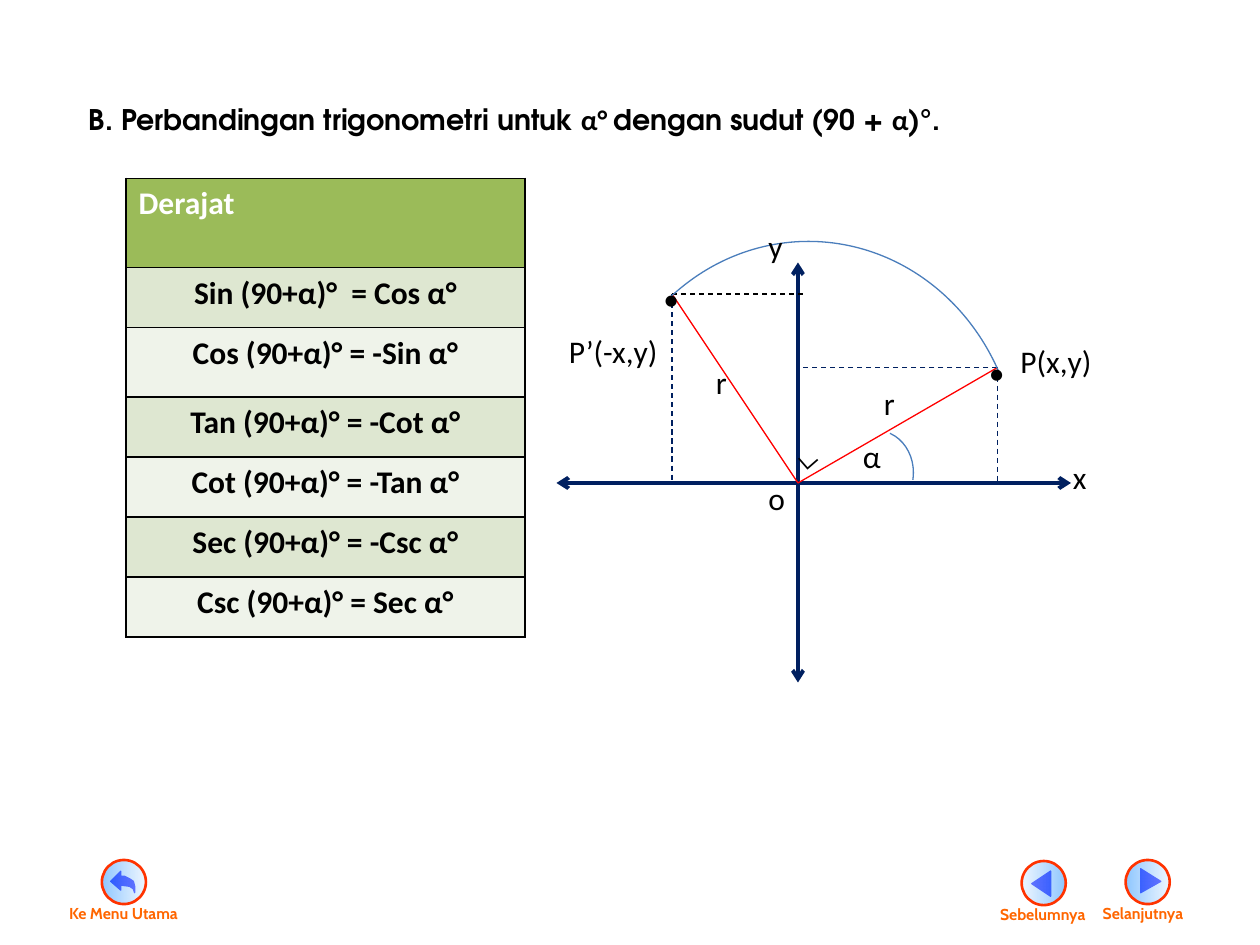
import dataclasses

import lxml.etree
import pptx
import pptx.dml.color
import pptx.enum.dml
import pptx.enum.shapes
import pptx.enum.text
import pptx.oxml
import pptx.oxml.ns
import pptx.util

CELL = pptx.util.Inches(10) / 120  # the slide is a grid of 120 columns by 90 rows


@dataclasses.dataclass(frozen=True)
class Theme:
    text: str = "000000"
    header_text: str = "FFFFFF"
    header_fill: str = "9BBB59"
    band_fills: tuple = ("DEE7D1", "EFF3EA")
    axis: str = "002060"
    radius: str = "FF0000"
    arc: str = "4B7EBC"
    glyph: str = "0000FF"
    ring: str = "FF3300"
    button_text: str = "FF6600"
    light_stop: tuple = ("DFEFFF", 51)
    dark_stop: tuple = ("3399FF", 56)
    body_font: str = "Calibri"
    title_font: str = "TeX Gyre Adventor"
    button_font: str = "Cabin"
    title_size: float = 16.2
    body_size: float = 18
    button_size: float = 9


THEME = Theme()


@dataclasses.dataclass(frozen=True)
class Box:
    """A rectangle in grid columns and rows."""
    left: float
    top: float
    width: float
    height: float

    def inner(self, left, top, width, height):
        return Box(self.left + left, self.top + top, width, height)

    def lengths(self):
        return [pptx.util.Emu(round(value * CELL))
                for value in (self.left, self.top, self.width, self.height)]


def rgb(color):
    return pptx.dml.color.RGBColor.from_string(color)


def add_child(parent, tag, **attributes):
    child = lxml.etree.SubElement(parent, pptx.oxml.ns.qn(tag))
    for name, value in attributes.items():
        child.set(name, str(value))
    return child


def add_run(paragraph, text, color=THEME.text, font=THEME.body_font,
            size=THEME.body_size, bold=False):
    run = paragraph.add_run()
    run.text = text
    run.font.name, run.font.size, run.font.bold = font, pptx.util.Pt(size), bold
    run.font.color.rgb = rgb(color)


def add_label(shapes, box, text, **style):
    label = shapes.add_textbox(*box.lengths())
    label.text_frame.word_wrap = False
    add_run(label.text_frame.paragraphs[0], text, **style)
    return label


def style_outline(shape, color, width):
    shape.shadow.inherit = False
    shape.line.color.rgb = rgb(color)
    shape.line.width = pptx.util.Pt(width)


def add_title(slide, box):
    title = slide.shapes.add_textbox(*box.lengths())
    frame = title.text_frame
    frame.word_wrap = True
    frame.margin_top = pptx.util.Inches(0.14)
    paragraph = frame.paragraphs[0]
    paragraph.alignment = pptx.enum.text.PP_ALIGN.CENTER
    for text, font in (
            ("B. Perbandingan trigonometri untuk ", THEME.title_font),
            ("α° ", THEME.body_font),
            ("dengan sudut (90 + ", THEME.title_font),
            ("α", THEME.body_font),
            (")°.", THEME.title_font)):
        add_run(paragraph, text, font=font, size=THEME.title_size, bold=True)


def add_borders(cell):
    properties = cell._tc.get_or_add_tcPr()
    for index, side in enumerate(("a:lnL", "a:lnR", "a:lnT", "a:lnB")):
        border = add_child(properties, side, w=pptx.util.Pt(1))
        add_child(add_child(border, "a:solidFill"), "a:srgbClr", val=THEME.text)
        properties.insert(index, border)


def add_identity_table(slide, box):
    rows = (
        ("Derajat", 8.5), ("Sin (90+α)°  = Cos α°", 5.72),
        ("Cos (90+α)° = -Sin α°", 6.6), ("Tan (90+α)° = -Cot α°", 5.72),
        ("Cot (90+α)° = -Tan α°", 5.72), ("Sec (90+α)° = -Csc α°", 5.72),
        ("Csc (90+α)° = Sec α°", 5.72))
    table = slide.shapes.add_table(len(rows), 1, *box.lengths()).table
    for index, (text, height) in enumerate(rows):
        table.rows[index].height = round(height * CELL)
        cell = table.cell(index, 0)
        header = index == 0
        fill = THEME.header_fill if header else THEME.band_fills[(index - 1) % 2]
        cell.fill.solid()
        cell.fill.fore_color.rgb = rgb(fill)
        paragraph = cell.text_frame.paragraphs[0]
        alignments = pptx.enum.text.PP_ALIGN
        paragraph.alignment = alignments.LEFT if header else alignments.CENTER
        add_run(paragraph, text, THEME.header_text if header else THEME.text, bold=True)
        add_borders(cell)


def add_diagram(slide, box):
    """Draw the axes, both radii, their projections, the arcs and the labels."""
    origin, image_point, point = (23, 25), (11, 7), (42, 14)

    def add_line(start, end, color, width=0.75, dashed=False, arrows=False):
        ends = [pptx.util.Emu(round(value * CELL)) for x, y in (start, end)
                for value in (box.left + x, box.top + y)]
        line = slide.shapes.add_connector(pptx.enum.shapes.MSO_CONNECTOR.STRAIGHT, *ends)
        line.line.color.rgb = rgb(color)
        line.line.width = pptx.util.Pt(width)
        if dashed:
            line.line.dash_style = pptx.enum.dml.MSO_LINE.DASH
        if arrows:
            for tag in ("a:headEnd", "a:tailEnd"):
                add_child(line.line._get_or_add_ln(), tag, type="arrow")
        add_child(line._element.spPr, "a:effectLst")

    def add_arc(place, start_angle, end_angle):
        arc = slide.shapes.add_shape(pptx.enum.shapes.MSO_SHAPE.ARC,
                                     *box.inner(*place).lengths())
        arc.adjustments[0] = start_angle * 0.6
        arc.adjustments[1] = end_angle * 0.6
        arc.fill.background()
        style_outline(arc, THEME.arc, 0.75)

    for start, end in (((23, 4), (23, 44)), ((0, 25), (49, 25))):
        add_line(start, end, THEME.axis, width=2.25, arrows=True)
    for tip in (image_point, point):
        add_line(tip, origin, THEME.radius)
        add_line(tip, (tip[0], origin[1]), THEME.axis, dashed=True)
    add_line(point, (origin[0], point[1]), THEME.axis, dashed=True)
    add_line(image_point, (23.5, image_point[1]), THEME.text, dashed=True)
    add_arc((4, 2, 40, 43), 230.5, 333.97)
    add_arc((27, 20, 7, 8), 288.81, 11.47)

    for text, left, top, width in (
            ("•", 9, 5, 4), ("•", 40, 12, 4), ("r", 30, 15, 3.5),
            ("r", 14, 13, 3.5), ("P’(-x,y)", 0, 10, 11), ("P(x,y)", 43, 11, 9.25),
            ("y", 19, 0, 3.8), ("x", 48, 22, 3.75), ("o", 19, 24, 4.1),
            ("α", 28, 20, 4.2)):
        add_label(slide.shapes, box.inner(left, top, width, 4.8), text)
    right_angle = add_label(slide.shapes, box.inner(21, 18.84, 8, 4.8), "∟")
    right_angle.text_frame.word_wrap = True
    right_angle.rotation = 318.9


def add_button(slide, box, glyph, stops, text, label_left, label_width):
    """Draw a disc filling the box; glyph points are in 1/35 of its side."""
    shapes = slide.shapes.add_group_shape().shapes
    left, top, side, _ = box.lengths()
    builder = shapes.build_freeform(*glyph[0], scale=side / 35)
    builder.add_line_segments(glyph[1:], close=True)
    symbol = builder.convert_to_shape(left, top)
    symbol.fill.solid()
    symbol.fill.fore_color.rgb = rgb(THEME.glyph)
    style_outline(symbol, THEME.glyph, 0.75)

    disc = shapes.add_shape(pptx.enum.shapes.MSO_SHAPE.OVAL, *box.lengths())
    disc.fill.gradient()
    disc.fill.gradient_angle = 0
    for stop, (color, opacity) in zip(disc.fill.gradient_stops, stops):
        stop.color.rgb = rgb(color)
    for element, (color, opacity) in zip(
            disc._element.spPr.iter(pptx.oxml.ns.qn("a:srgbClr")), stops):
        add_child(element, "a:alpha", val=opacity * 1000)
    style_outline(disc, THEME.ring, 1.5)
    add_label(shapes, box.inner(label_left, 3.6, label_width, 3), text,
              color=THEME.button_text, font=THEME.button_font,
              size=THEME.button_size, bold=True)


def add_navigation(slide, box):
    back_arrow = ((15, 13), (18, 13), (22, 15), (25, 17), (26, 21), (26, 26),
                  (25, 23), (22, 21), (15, 20), (15, 24), (7, 17), (15, 9))
    left_triangle = ((8, 18), (23, 28), (23, 8))
    right_triangle = ((28, 17), (12, 7), (12, 26))
    light_first = (THEME.light_stop, THEME.dark_stop)
    dark_first = light_first[::-1]
    for left, top, *content in (
            (4.3, 0.1, left_triangle, light_first, "Sebelumnya", -3.24, 10.9),
            (14.2, 0, right_triangle, dark_first, "Selanjutnya", -3.36, 10.7),
            (-83.3, 0, back_arrow, dark_first, "Ke Menu Utama", -4.3, 13.4)):
        add_button(slide, box.inner(left, top, 4.2, 4.2), *content)


def main():
    presentation = pptx.Presentation()
    presentation.slide_width = pptx.util.Inches(10)
    presentation.slide_height = pptx.util.Inches(7.5)
    slide = presentation.slides.add_slide(presentation.slide_layouts[6])
    add_title(slide, Box(4, 8, 90, 10))
    add_identity_table(slide, Box(12, 17, 38, 43.7))
    add_diagram(slide, Box(53, 21, 52, 45))
    add_navigation(slide, Box(93, 81.9, 22, 7))
    presentation.save("out.pptx")


if __name__ == "__main__":
    main()
